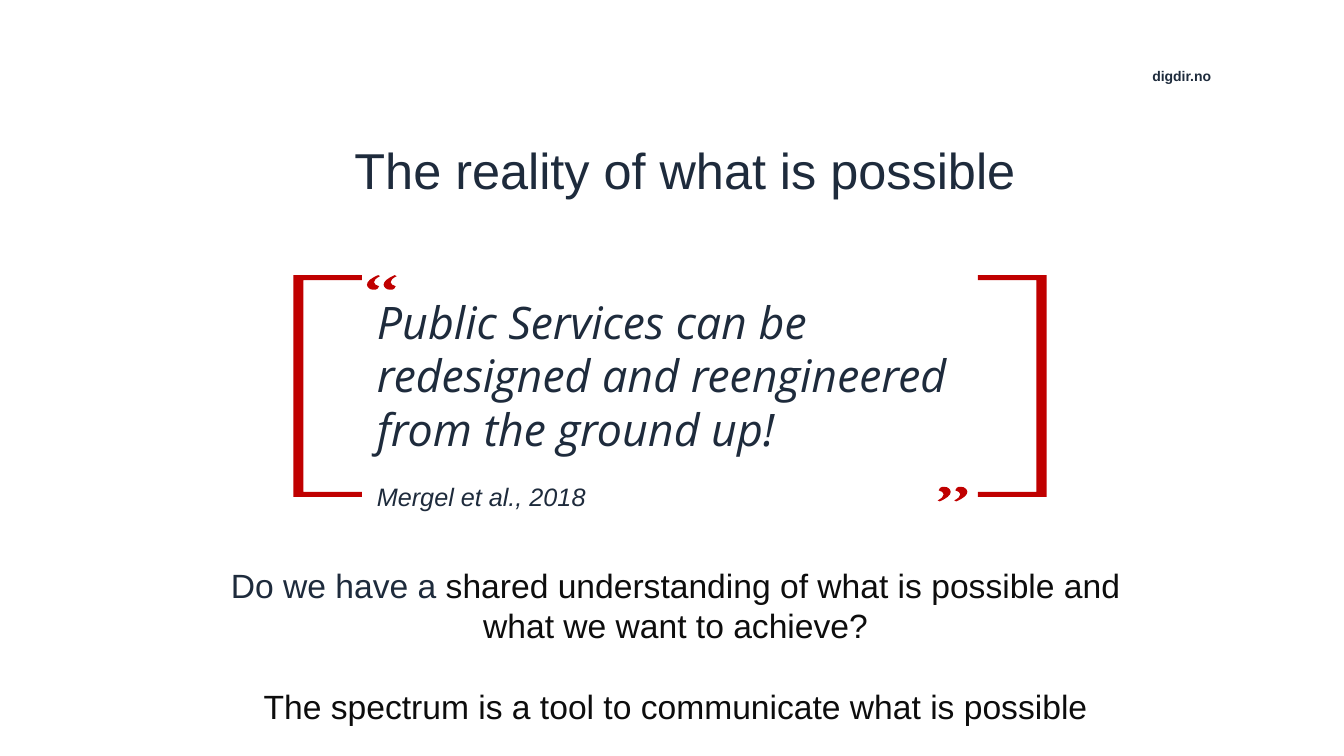
from lxml import etree
from pptx import Presentation
from pptx.dml.color import RGBColor
from pptx.enum.text import MSO_ANCHOR, PP_ALIGN
from pptx.oxml.ns import qn
from pptx.util import Inches, Pt

NAVY = RGBColor(0x1E, 0x2B, 0x3C)
INK = RGBColor(0x0D, 0x0D, 0x0D)
RED = RGBColor(0xC0, 0x00, 0x00)

# Opening quote mark in hundredths of an inch: start, edge, then cubic curves
MARK_START, MARK_EDGE = (11, 0), (13, 1)
MARK_CURVES = [
    ((9, 3), (7, 5), (7, 7)), ((7, 9), (9, 10), (12, 11)),
    ((12, 12), (11.5, 13), (10.5, 13.5)), ((9.5, 14.5), (8, 14.5), (6.5, 14.5)),
    ((4.5, 14.5), (3, 14), (2, 13)), ((1, 12), (0, 11), (0, 9.5)),
    ((0, 8), (1, 6), (3, 4.5)), ((5, 3), (7.5, 1.5), (11, 0)),
]
MARK_WIDTH, MARK_HEIGHT, MARK_PITCH = 0.13, 0.145, 0.165


def add_text(slide, box, size, paragraphs, font="Arial", align=PP_ALIGN.LEFT,
             bold=False, italic=False, gap=0, spacing=None):
    """Each paragraph is a list of (words, colour) pairs."""
    frame = slide.shapes.add_textbox(*map(Inches, box)).text_frame
    frame.word_wrap = True
    for index, runs in enumerate(paragraphs):
        paragraph = frame.paragraphs[0] if index == 0 else frame.add_paragraph()
        paragraph.alignment = align
        if index:
            paragraph.space_before = Pt(gap)
        if spacing:
            paragraph.line_spacing = spacing
        paragraph.font.name, paragraph.font.size = font, Pt(size)
        paragraph.font.bold, paragraph.font.italic = bold, italic
        for words, colour in runs:
            run = paragraph.add_run()
            run.text = words
            run.font.color.rgb = colour
    return frame


def add_outline(slide, contours):
    """Draw closed contours, given in EMU, as one red shape."""
    builder = slide.shapes.build_freeform(*contours[0][0])
    for index, points in enumerate(contours):
        if index:
            builder.move_to(*points[0])
        builder.add_line_segments(points[1:], close=True)
    outline = builder.convert_to_shape()
    outline.shadow.inherit = False
    outline.fill.solid()
    outline.fill.fore_color.rgb = RED
    outline.line.fill.background()
    return outline


def add_quote_mark(slide, left, top, closing):
    def place(point):
        x, y = point[0] / 100, point[1] / 100
        if closing:
            x, y = MARK_WIDTH - x, MARK_HEIGHT - y
        return Inches(left + x), Inches(top + y)

    anchors = [MARK_START, MARK_EDGE] + [curve[-1] for curve in MARK_CURVES]
    mark = add_outline(slide, [[place(anchor) for anchor in anchors]])
    # Bend every segment after the straight edge
    segments = list(mark.element.iter(qn("a:lnTo")))[1:]
    for segment, curve in zip(segments, MARK_CURVES):
        bend = etree.Element(qn("a:cubicBezTo"))
        for x, y in map(place, curve):
            etree.SubElement(bend, qn("a:pt"), x=str(x - mark.left), y=str(y - mark.top))
        segment.getparent().replace(segment, bend)


def add_quote_marks(slide, left, top, closing=False):
    for index in range(2):
        add_quote_mark(slide, left + index * MARK_PITCH, top, closing)


def add_brackets(slide, left, top, width, height):
    arm, post, bar = 0.68, 0.1, 0.05
    bracket = [(0, 0), (arm, 0), (arm, bar), (post, bar), (post, height - bar),
               (arm, height - bar), (arm, height), (0, height)]
    add_outline(slide, [
        [(Inches(origin + direction * x), Inches(top + y)) for x, y in bracket]
        for origin, direction in ((left + width, -1), (left, 1))])


def add_header(slide, width):
    add_text(slide, (0.85 * width, 0.62, 0.84, 0.27), 10, [[("digdir.no", NAVY)]], bold=True)
    title = add_text(slide, (1.75, 1.42, 10.09, 0.57), 36,
                     [[("The reality of what is possible", NAVY)]],
                     align=PP_ALIGN.CENTER, spacing=0.9)
    title.margin_left = title.margin_right = title.margin_top = title.margin_bottom = 0
    title.vertical_anchor = MSO_ANCHOR.BOTTOM


def add_quote(slide, left, top, width, height):
    add_brackets(slide, left, top, width, height)
    text_left = left + 0.73
    add_text(slide, (text_left, top + 0.14, 6.46, 1.09), 32,
             [[("Public Services can be redesigned and reengineered from the ground up!", NAVY)]],
             font="Open Sans", italic=True)
    add_quote_marks(slide, text_left, top)
    add_quote_marks(slide, left + width - 1.08, top + height - 0.1, closing=True)
    add_text(slide, (text_left, top + 2, 6.67, 0.4), 18,
             [[("Mergel et al., 2018", NAVY)]], italic=True)


def add_question(slide, box):
    add_text(slide, box, 24, [
        [("Do we have a ", NAVY),
         ("shared understanding of what is possible and what we want to achieve?", INK)],
        [("The spectrum is a tool to communicate what is possible", INK)],
    ], align=PP_ALIGN.CENTER, gap=29.2)


def main():
    deck = Presentation()
    deck.slide_width, deck.slide_height = Inches(13.33), Inches(7.5)
    slide = deck.slides.add_slide(deck.slide_layouts[6])
    add_header(slide, 13.33)
    add_question(slide, (1.83, 5.55, 9.74, 1.72))
    add_quote(slide, 2.91, 2.73, 7.47, 2.2)
    deck.save("out.pptx")


if __name__ == "__main__":
    main()
